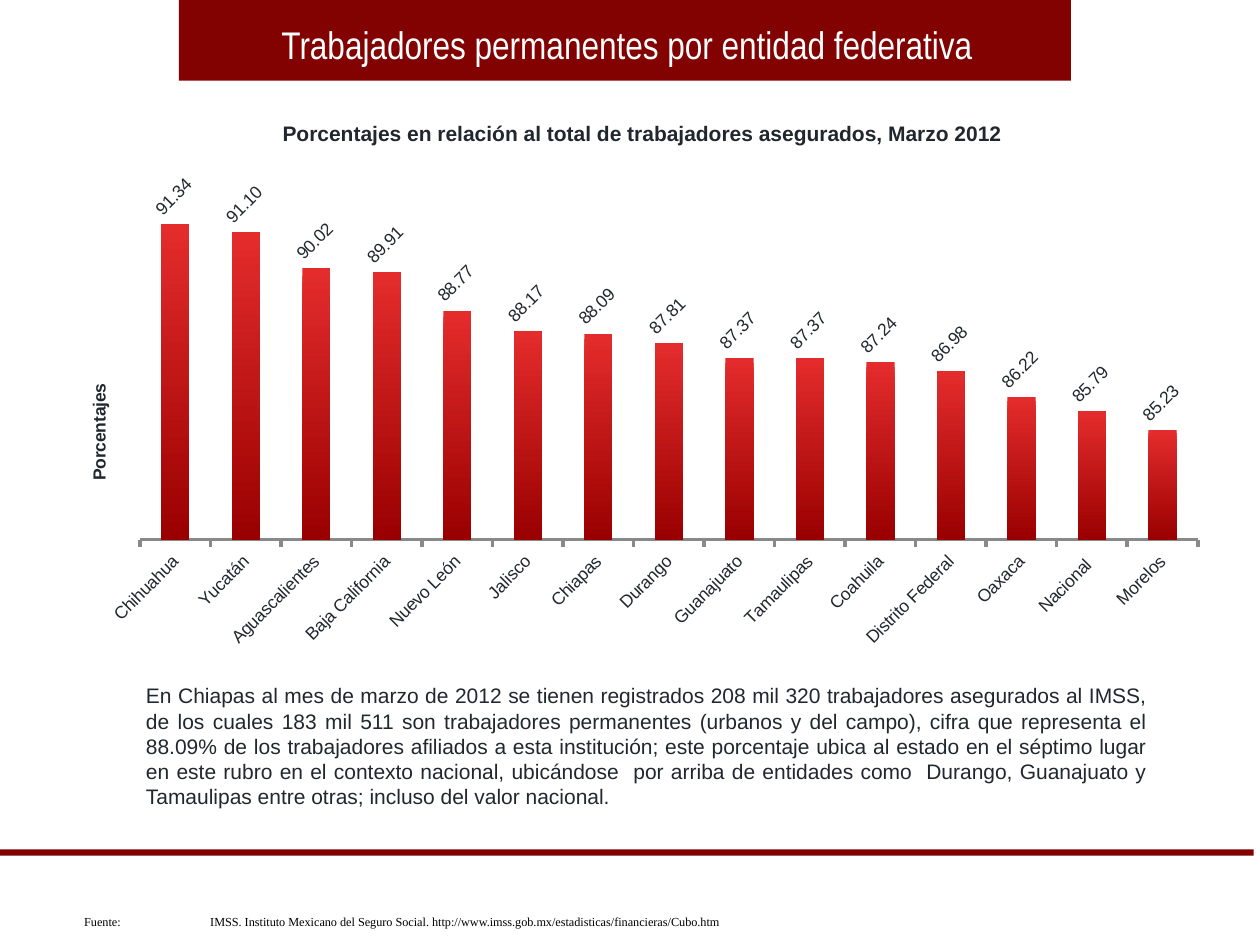
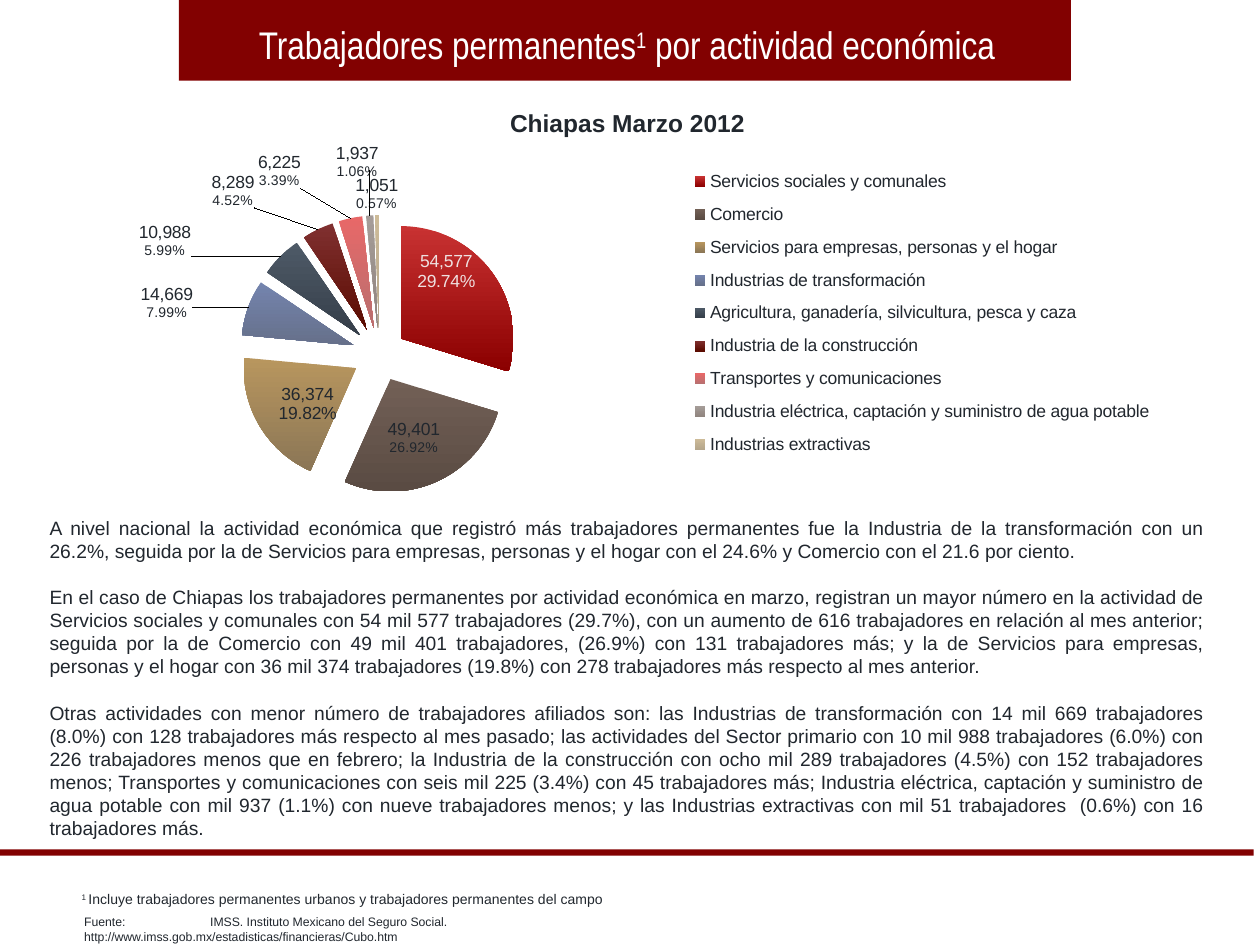
"""Builds two slides on permanent workers by state and by economic activity."""
from lxml import etree
from pptx import Presentation
from pptx.chart.data import CategoryChartData
from pptx.dml.color import RGBColor
from pptx.enum.chart import XL_CHART_TYPE, XL_LABEL_POSITION, XL_LEGEND_POSITION, XL_TICK_MARK
from pptx.enum.shapes import MSO_SHAPE
from pptx.enum.text import MSO_ANCHOR, PP_ALIGN
from pptx.oxml.ns import qn
from pptx.util import Inches, Pt

COLUMN_CHART, PIE_CHART = XL_CHART_TYPE.COLUMN_CLUSTERED, XL_CHART_TYPE.PIE
OUTSIDE, CENTRE_LABEL = XL_LABEL_POSITION.OUTSIDE_END, XL_LABEL_POSITION.CENTER
LEGEND_RIGHT = XL_LEGEND_POSITION.RIGHT
TICK_OUT, TICK_NONE = XL_TICK_MARK.OUTSIDE, XL_TICK_MARK.NONE
RECT, ROUND_RECT = MSO_SHAPE.RECTANGLE, MSO_SHAPE.ROUNDED_RECTANGLE
MIDDLE, TOP = MSO_ANCHOR.MIDDLE, MSO_ANCHOR.TOP
LEFT, CENTER, JUSTIFY = PP_ALIGN.LEFT, PP_ALIGN.CENTER, PP_ALIGN.JUSTIFY

MAROON = RGBColor(0x82, 0x01, 0x01)
WHITE = RGBColor(0xFF, 0xFF, 0xFF)
BLACK = RGBColor(0, 0, 0)
INK = RGBColor(0x21, 0x27, 0x2E)
AXIS_GREY = RGBColor(0x89, 0x89, 0x89)
PALE = RGBColor(0xEF, 0xE0, 0xE0)
BAR_LIGHT = RGBColor(0xE4, 0x2C, 0x2C)
BAR_DARK = RGBColor(0x9A, 0x00, 0x00)

WIDTH, HEIGHT = Inches(10), Inches(7.5)
COLUMNS, ROWS = 100, 75

TITLE = {"name": "Arial Narrow", "size": Pt(22), "color": WHITE}
CAPTION = {"name": "Arial", "size": Pt(12), "bold": True, "color": INK}
BODY = {"name": "Arial", "size": Pt(12), "color": INK}
CHART_TEXT = {"name": "Arial", "size": Pt(10), "bold": False, "color": INK}
SOURCE = {"name": "Arial", "size": Pt(7), "color": INK}

STATE_LABELS = {"show_value": True, "position": OUTSIDE,
                "number_format": "#,##0.00_ ;\\-#,##0.00\\ ", "number_format_is_linked": False}
ACTIVITY_LABELS = {"show_value": True, "show_percentage": True,
                   "number_format": "0.00%", "number_format_is_linked": False}
SOURCE_TEXT = ("Fuente:\tIMSS. Instituto Mexicano del Seguro Social. "
               "http://www.imss.gob.mx/estadisticas/financieras/Cubo.htm")

STATES = {
    "Chihuahua": 91.34, "Yucatán": 91.1, "Aguascalientes": 90.02,
    "Baja California": 89.91, "Nuevo León": 88.77, "Jalisco": 88.17,
    "Chiapas": 88.09, "Durango": 87.81, "Guanajuato": 87.37,
    "Tamaulipas": 87.37, "Coahuila": 87.24, "Distrito Federal": 86.98,
    "Oaxaca": 86.22, "Nacional ": 85.79, "Morelos": 85.23,
}

ACTIVITIES = [
    ("Servicios sociales y comunales", 54577, "29.74%", "C83232", "8B0000", (0, -0.09), 10),
    ("Comercio", 49401, "26.92%", "726056", "5A4B43", (0, 0.02), 8),
    ("Servicios para empresas, personas y el hogar", 36374, "19.82%",
     "B8965E", "8B7656", (0, 0.02), 10),
    ("Industrias de transformación", 14669, "7.99%", "7484AE", "66708A", (-0.04, 0.04), 8),
    ("Agricultura, ganadería, silvicultura, pesca y caza", 10988, "5.99%",
     "4E5A67", "353E49", (-0.07, 0.02), 8),
    ("Industria de la construcción", 8289, "4.52%", "803030", "5A0B00", (-0.05, -0.04), 8),
    ("Transportes y comunicaciones", 6225, "3.39%", "E86868", "B87070", (-0.04, -0.06), 8),
    ("Industria eléctrica, captación y suministro de agua potable", 1937, "1.06%",
     "A59C98", "90857F", (-0.01, -0.1), 8),
    ("Industrias extractivas", 1051, "0.57%", "CDBB98", "B5A68C", (0, 0.01), 8),
]

STATES_TEXT = [
    "En Chiapas al mes de marzo de 2012 se tienen registrados 208 mil 320 trabajadores "
    "asegurados al IMSS, de los cuales 183 mil 511 son trabajadores permanentes (urbanos y "
    "del campo), cifra que representa el 88.09% de los trabajadores afiliados a esta "
    "institución; este porcentaje ubica al estado en el séptimo lugar en este rubro en el "
    "contexto nacional, ubicándose  por arriba de entidades como  Durango, Guanajuato y "
    "Tamaulipas entre otras; incluso del valor nacional.",
]
ACTIVITIES_TEXT = [
    "A nivel nacional la actividad económica que registró más trabajadores permanentes fue la "
    "Industria de la transformación con un 26.2%, seguida por la de Servicios para empresas, "
    "personas y el hogar con el 24.6% y Comercio con el 21.6 por ciento. ",
    "En el caso de Chiapas los trabajadores permanentes por actividad económica en marzo, "
    "registran un mayor número en la actividad de Servicios sociales y comunales con 54 mil "
    "577 trabajadores (29.7%), con un aumento de 616 trabajadores en relación al mes anterior; "
    "seguida por la de Comercio con 49 mil 401 trabajadores, (26.9%) con 131 trabajadores más; "
    "y la de Servicios para empresas, personas y el hogar con 36 mil 374 trabajadores (19.8%) "
    "con 278 trabajadores más respecto al mes anterior.",
    "Otras actividades con menor número de trabajadores afiliados son: las Industrias de "
    "transformación con 14 mil 669 trabajadores (8.0%) con 128 trabajadores más respecto al "
    "mes pasado; las actividades del Sector primario con 10 mil 988 trabajadores (6.0%) con "
    "226 trabajadores menos que en febrero; la Industria de la construcción con ocho mil 289 "
    "trabajadores (4.5%) con 152 trabajadores menos; Transportes y comunicaciones con seis mil "
    "225 (3.4%) con 45 trabajadores más; Industria eléctrica, captación y suministro de agua "
    "potable con mil 937 (1.1%) con nueve trabajadores menos; y las Industrias extractivas con "
    "mil 51 trabajadores  (0.6%) con 16 trabajadores más.",
]


def grid(left, top, width, height):
    """Turn columns and rows of the slide grid into lengths."""
    column, row = WIDTH / COLUMNS, HEIGHT / ROWS
    return [round(n) for n in (left * column, top * row, width * column, height * row)]


def style(target, values):
    """Set attributes from a dict of format values."""
    for key, value in values.items():
        if key == "color":
            target.color.rgb = value
        else:
            setattr(target, key, value)


def write(frame, paragraphs, values, align=LEFT, anchor=TOP, gap=0, tab=None):
    """Fill a frame; a paragraph is a list of runs and ^ starts a raised run."""
    frame.word_wrap = True
    frame.vertical_anchor = anchor
    for number, runs in enumerate(paragraphs):
        paragraph = frame.paragraphs[0] if number == 0 else frame.add_paragraph()
        paragraph.alignment = align
        if number:
            paragraph.space_before = Pt(gap)
        if tab:
            stops = etree.SubElement(paragraph._p.get_or_add_pPr(), qn("a:tabLst"))
            etree.SubElement(stops, qn("a:tab"), pos=str(tab), algn="l")
        for text in runs:
            run = paragraph.add_run()
            run.text = text.lstrip("^")
            style(run.font, values)
            if text.startswith("^"):
                run._r.get_or_add_rPr().set("baseline", "30000")


def add_text(slide, cells, runs, values, **layout):
    """Add a text box with one paragraph."""
    write(slide.shapes.add_textbox(*grid(*cells)).text_frame, [runs], values, **layout)


def add_band(slide, cells):
    """Add a plain maroon band."""
    band = slide.shapes.add_shape(RECT, *grid(*cells))
    band.shadow.inherit = False
    band.fill.solid()
    band.fill.fore_color.rgb = MAROON
    band.line.fill.background()


def add_commentary(slide, cells, texts, size):
    """Add the justified commentary panel."""
    panel = slide.shapes.add_shape(ROUND_RECT, *grid(*cells))
    panel.adjustments[0] = 0
    panel.shadow.inherit = False
    panel.fill.background()
    panel.line.fill.background()
    write(panel.text_frame, [[text] for text in texts], {**BODY, "size": Pt(size)},
          align=JUSTIFY, anchor=MIDDLE, gap=13.3)


def start_slide(deck, title_runs):
    """Add a slide with its bands and title."""
    slide = deck.slides.add_slide(deck.slide_layouts[6])
    add_band(slide, (14.2, 0, 70.8, 6.4))
    add_band(slide, (0, 67.4, 99.5, 0.5))
    add_text(slide, (14.5, 1.2, 70.5, 4.7), title_runs, TITLE, align=CENTER)
    return slide


def add_source(slide, columns, values):
    """Add the source line at the foot."""
    add_text(slide, (5.7, 72.1, columns, 2.2), [SOURCE_TEXT], values, tab=Inches(1))


def place(part, index, edge=True, target=None, **shares):
    """Give a chart part a manual layout in shares of the chart."""
    for old in part.findall(qn("c:layout")):
        part.remove(old)
    layout = part.makeelement(qn("c:layout"))
    manual = etree.SubElement(layout, qn("c:manualLayout"))
    if target:
        etree.SubElement(manual, qn("c:layoutTarget"), val=target)
    if edge:
        for axis in "xy":
            etree.SubElement(manual, qn(f"c:{axis}Mode"), val="edge")
    for side, share in shares.items():
        etree.SubElement(manual, qn(f"c:{side}"), val=str(share))
    part.insert(index, layout)


def shade(fill, light, dark):
    """Fill from a light top to a dark foot."""
    fill.gradient()
    fill.gradient_angle = 270
    for stop, tone in zip(fill.gradient_stops, (light, dark)):
        stop.color.rgb = tone


def add_chart(slide, kind, cells, names, values, number_format):
    """Add a one-series chart with the shared text style."""
    data = CategoryChartData(number_format=number_format)
    data.categories = names
    data.add_series("Series 1", values)
    chart = slide.shapes.add_chart(kind, *grid(*cells), data).chart
    chart.has_title = chart.has_legend = False
    style(chart.font, CHART_TEXT)
    return chart


def turn(chart, query, degrees):
    """Rotate the chart texts that a query finds."""
    for body in chart.element.xpath(query):
        body.set("rot", str(degrees * 60000))
        body.set("vert", "horz")


def add_states_chart(slide):
    """Add the columns of the share by state."""
    chart = add_chart(slide, COLUMN_CHART, (6.7, 13.6, 88.5, 39.5),
                      list(STATES), list(STATES.values()), "0.00")
    plot = chart.plots[0]
    plot.gap_width, plot.vary_by_categories = 150, False
    shares_series = plot.series[0]
    shade(shares_series.format.fill, BAR_LIGHT, BAR_DARK)
    style(shares_series.data_labels, STATE_LABELS)
    style(shares_series.data_labels.font, CHART_TEXT)

    states, shares = chart.category_axis, chart.value_axis
    states.major_tick_mark, states.minor_tick_mark = TICK_OUT, TICK_NONE
    states.format.line.color.rgb, states.format.line.width = AXIS_GREY, Pt(2)
    style(states.tick_labels.font, CHART_TEXT)
    shares.minimum_scale, shares.maximum_scale = 82, 92
    shares.has_major_gridlines = shares.visible = False
    write(shares.axis_title.text_frame, [["Porcentajes"]], {**CHART_TEXT, "bold": True})

    turn(chart, ".//c:catAx/c:txPr/a:bodyPr | .//c:dLbls/c:txPr/a:bodyPr", -45)
    turn(chart, ".//c:title//a:bodyPr", -90)
    place(chart.element.xpath(".//c:valAx/c:title")[0], 1, x=0, y=0.42)
    place(chart.element.xpath(".//c:plotArea")[0], 0, target="inner",
          x=0.05, y=0.06, w=0.95, h=0.68)


def add_activities_chart(slide):
    """Add the exploded pie of workers by activity."""
    chart = add_chart(slide, PIE_CHART, (1.4, 11.4, 95.7, 29.9),
                      [row[0] for row in ACTIVITIES], [row[1] for row in ACTIVITIES], "#,##0")
    plot = chart.plots[0]
    plot.vary_by_categories = True
    workers_series = plot.series[0]
    style(workers_series.data_labels, ACTIVITY_LABELS)
    for number, (_, workers, share, light, dark, _, size) in enumerate(ACTIVITIES):
        point = workers_series.points[number]
        shade(point.format.fill, RGBColor.from_string(light), RGBColor.from_string(dark))
        label = point.data_label
        frame = label.text_frame
        ink = PALE if number == 0 else INK
        write(frame, [[f"{workers:,}"], [share]], {**CHART_TEXT, "color": ink}, align=CENTER)
        frame.paragraphs[1].runs[0].font.size = Pt(size)
        label.position = CENTRE_LABEL if number < 3 else OUTSIDE
    for label, row in zip(chart.element.xpath(".//c:dLbl"), ACTIVITIES):
        place(label, 1, edge=False, x=row[5][0], y=row[5][1])
    for shown in chart.element.xpath(".//c:dLbl/c:showPercent"):
        shown.set("val", "1")
    first_slice = chart.element.xpath(".//c:dPt")[0]
    first_slice.addprevious(first_slice.makeelement(qn("c:explosion"), {"val": "24"}))

    chart.has_legend = True
    chart.legend.position, chart.legend.include_in_layout = LEGEND_RIGHT, False
    style(chart.legend.font, CHART_TEXT)
    place(chart.element.xpath(".//c:legend")[0], 1, x=0.54, y=0.04, w=0.42, h=0.82)
    place(chart.element.xpath(".//c:plotArea")[0], 0, target="inner",
          x=0, y=0.19, w=0.6, h=0.74)


def main():
    """Build and save the deck."""
    deck = Presentation()
    deck.slide_width, deck.slide_height = WIDTH, HEIGHT

    states = start_slide(deck, ["Trabajadores permanentes por entidad federativa"])
    add_commentary(states, (10.6, 52.9, 81.5, 12.6), STATES_TEXT, 12)
    add_text(states, (14.1, 9.1, 73.8, 3),
             ["Porcentajes en relación al total de trabajadores asegurados, Marzo 2012"],
             CAPTION, align=CENTER)
    add_source(states, 57.5, {**SOURCE, "name": "Times New Roman", "color": BLACK})
    add_states_chart(states)

    activities = start_slide(
        deck, ["Trabajadores permanentes", "^1", " por actividad económica"])
    add_commentary(activities, (2.95, 41.8, 93.7, 24), ACTIVITIES_TEXT, 11)
    add_text(activities, (31.8, 8.1, 36, 3.4), ["Chiapas Marzo 2012"],
             {**CAPTION, "size": Pt(14)}, align=CENTER)
    add_source(activities, 50.8, SOURCE)
    add_text(activities, (5.5, 70.2, 50, 2.4),
             ["^1 ", "Incluye trabajadores permanentes urbanos y trabajadores permanentes "
              "del campo"], {**SOURCE, "size": Pt(8)})
    add_activities_chart(activities)

    deck.save("out.pptx")


if __name__ == "__main__":
    main()
